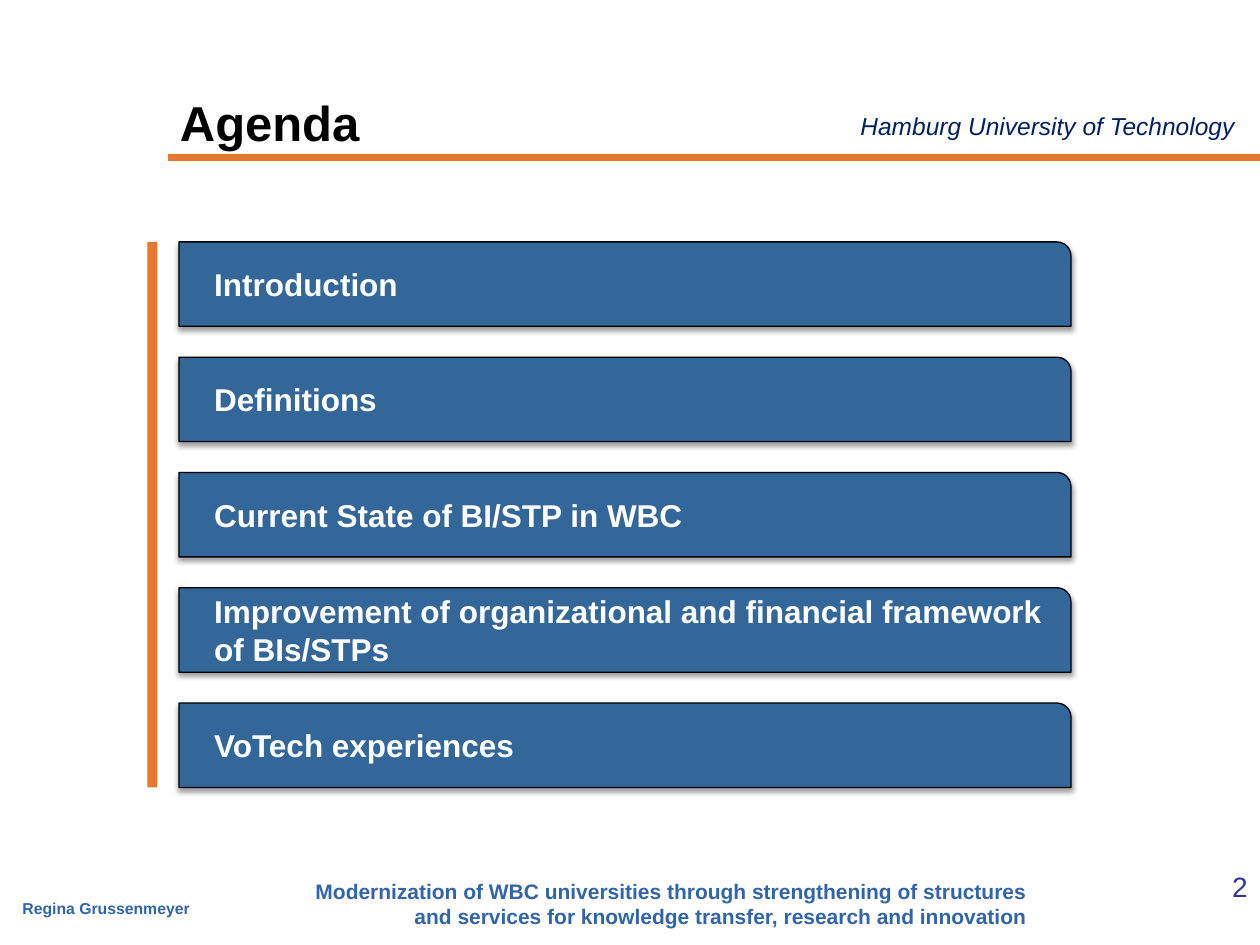
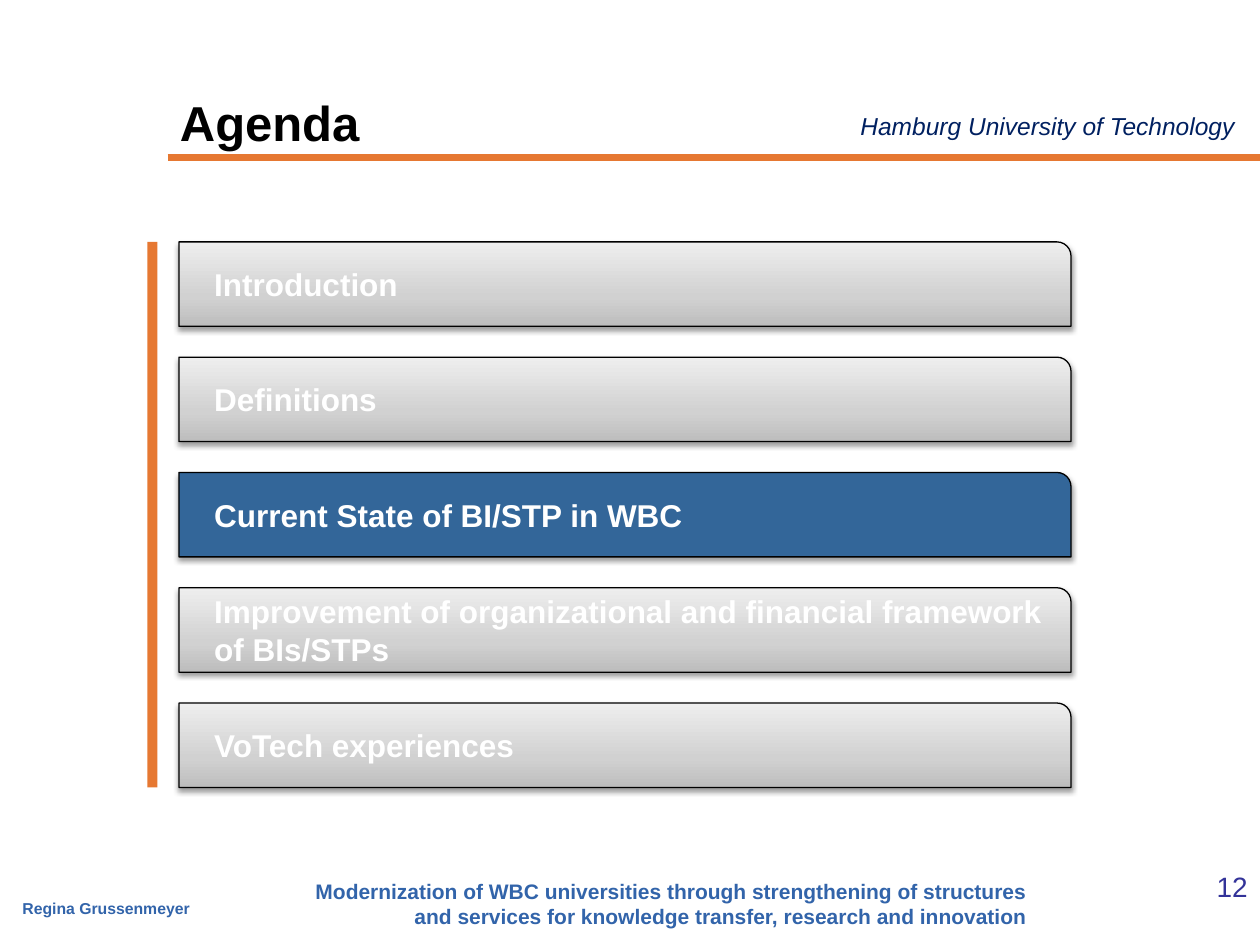
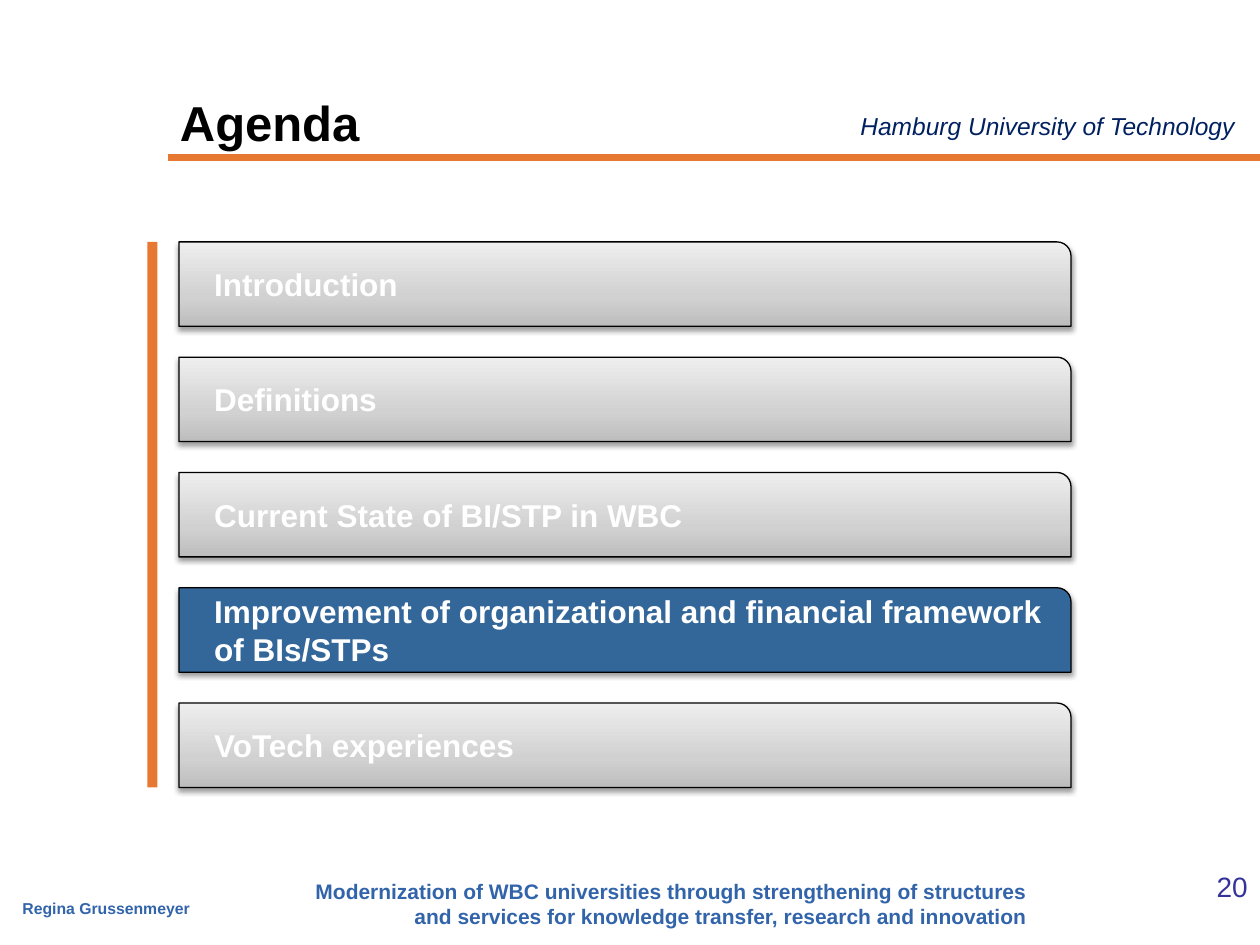
from typing import NamedTuple

from pptx import Presentation
from pptx.dml.color import RGBColor
from pptx.enum import shapes, text
from pptx.oxml import parse_xml
from pptx.oxml.ns import nsdecls
from pptx.util import Inches, Pt

COLORS = {
    "orange": "E67832",
    "footer": "3264AA",
    "university": "002060",
    "number": "333399",
    "title": "000000",
    "bar": "336699",
    "bar_line": "000000",
    "bar_text": "FFFFFF",
    "shade_dark": "BDBDBD",
    "shade_mid": "D1D1D1",
    "shade_light": "EEEEEE",
}
FONT = "Arial"
LEFT, RIGHT = text.PP_ALIGN.LEFT, text.PP_ALIGN.RIGHT
TOP, MIDDLE, BOTTOM = (text.MSO_ANCHOR.TOP, text.MSO_ANCHOR.MIDDLE,
                       text.MSO_ANCHOR.BOTTOM)

TOPICS = [
    "Introduction",
    "Definitions",
    "Current State of BI/STP in WBC",
    "Improvement of organizational and financial framework of BIs/STPs",
    "VoTech experiences",
]
BAR_LEFT, BAR_WIDTH, BAR_HEIGHT = 1.42, 7.08, 0.67
LIST_TOP, LIST_HEIGHT = 1.92, 4.33
BAR_STEP = (LIST_HEIGHT - BAR_HEIGHT) / (len(TOPICS) - 1)


class Label(NamedTuple):
    text: str
    left: float
    top: float
    width: float
    height: float
    size: int
    color: str
    bold: bool = False
    italic: bool = False
    align: text.PP_ALIGN = LEFT
    anchor: text.MSO_ANCHOR = TOP
    wrap: bool = True


class Agenda(NamedTuple):
    number: int
    active: set[int]


FRAME_LABELS = [
    Label("Regina Grussenmeyer", 0.08, 7.08, 2.25, 0.25, 9, "footer", bold=True),
    Label("Modernization of WBC universities through strengthening of structures "
          "and services for knowledge transfer, research and innovation",
          2.33, 6.92, 5.92, 0.5, 12, "footer", bold=True, align=RIGHT),
    Label("Hamburg University of Technology", 6.73, 0.83, 3.19, 0.34, 14,
          "university", italic=True, wrap=False),
    Label("Agenda", 1.33, 0, 5.33, 1.25, 28, "title", bold=True, anchor=BOTTOM),
]
AGENDAS = [
    Agenda(2, set(range(len(TOPICS)))),
    Agenda(12, {2}),
    Agenda(20, {3}),
]


def rgb(name: str) -> RGBColor:
    return RGBColor.from_string(COLORS[name])


def write(tf, content: str, size: int, color: str, bold: bool = False,
          italic: bool = False, align=LEFT, anchor=TOP, wrap: bool = True) -> None:
    tf.text = content
    tf.word_wrap = wrap
    tf.vertical_anchor = anchor
    p = tf.paragraphs[0]
    p.alignment = align
    font = p.runs[0].font
    font.name, font.size = FONT, Pt(size)
    font.bold, font.italic = bold, italic
    font.color.rgb = rgb(color)


def add_label(s, label: Label) -> None:
    box = s.shapes.add_textbox(Inches(label.left), Inches(label.top),
                               Inches(label.width), Inches(label.height))
    write(box.text_frame, label.text, *label[5:])


def add_title_rule(s) -> None:
    line = s.shapes.add_connector(shapes.MSO_CONNECTOR.STRAIGHT, Inches(1.33),
                                  Inches(1.25), Inches(10), Inches(1.25))
    line.line.color.rgb = rgb("orange")
    line.line.width = Pt(4.5)
    line._element.spPr.append(parse_xml(f"<a:effectLst {nsdecls('a')}/>"))


def add_frame(s, number: int) -> None:
    """Draw what every slide shares: title, rule, university and footers."""
    add_title_rule(s)
    for label in FRAME_LABELS:
        add_label(s, label)
    add_label(s, Label(str(number), 9.25, 6.85, 0.75, 0.4, 16, "number", align=RIGHT))


def shade(sp) -> None:
    """Fill with a grey gradient that runs from dark at the bottom to light."""
    stops = "".join(
        f'<a:gs pos="{pos * 1000}"><a:srgbClr val="{COLORS[name]}"/></a:gs>'
        for pos, name in [(0, "shade_dark"), (35, "shade_mid"), (100, "shade_light")])
    sp._element.spPr.append(parse_xml(
        f"<a:gradFill {nsdecls('a')} rotWithShape=\"1\"><a:gsLst>{stops}</a:gsLst>"
        '<a:lin ang="16200000" scaled="0"/></a:gradFill>'))


def drop_shadow(sp) -> None:
    sp._element.spPr.append(parse_xml(
        f"<a:effectLst {nsdecls('a')}>"
        f'<a:outerShdw blurRad="{Pt(3.1)}" dist="{Pt(1.6)}" dir="5400000" rotWithShape="0">'
        '<a:srgbClr val="000000"><a:alpha val="38000"/></a:srgbClr>'
        "</a:outerShdw></a:effectLst>"))


def add_bar(s, index: int, topic: str, active: bool) -> None:
    sp = s.shapes.add_shape(
        shapes.MSO_SHAPE.ROUND_1_RECTANGLE, Inches(BAR_LEFT),
        Inches(LIST_TOP + index * BAR_STEP), Inches(BAR_WIDTH), Inches(BAR_HEIGHT))
    if active:
        sp.fill.solid()
        sp.fill.fore_color.rgb = rgb("bar")
    else:
        shade(sp)
    sp.line.color.rgb = rgb("bar_line")
    sp.line.width = Pt(0.75)
    drop_shadow(sp)
    sp.text_frame.margin_left = Inches(0.28)
    write(sp.text_frame, topic, 18, "bar_text", bold=True, anchor=MIDDLE)


def add_side_rail(s) -> None:
    rail = s.shapes.add_shape(shapes.MSO_SHAPE.RECTANGLE, Inches(1.17),
                              Inches(LIST_TOP), Inches(0.08), Inches(LIST_HEIGHT))
    rail.shadow.inherit = False
    rail.fill.solid()
    rail.fill.fore_color.rgb = rgb("orange")
    rail.line.fill.background()


def add_agenda(prs, agenda: Agenda) -> None:
    s = prs.slides.add_slide(prs.slide_layouts[6])
    add_frame(s, agenda.number)
    add_side_rail(s)
    for i, topic in enumerate(TOPICS):
        add_bar(s, i, topic, i in agenda.active)


def main() -> None:
    prs = Presentation()
    prs.slide_width, prs.slide_height = Inches(10), Inches(7.5)
    for agenda in AGENDAS:
        add_agenda(prs, agenda)
    prs.save("out.pptx")


if __name__ == "__main__":
    main()
